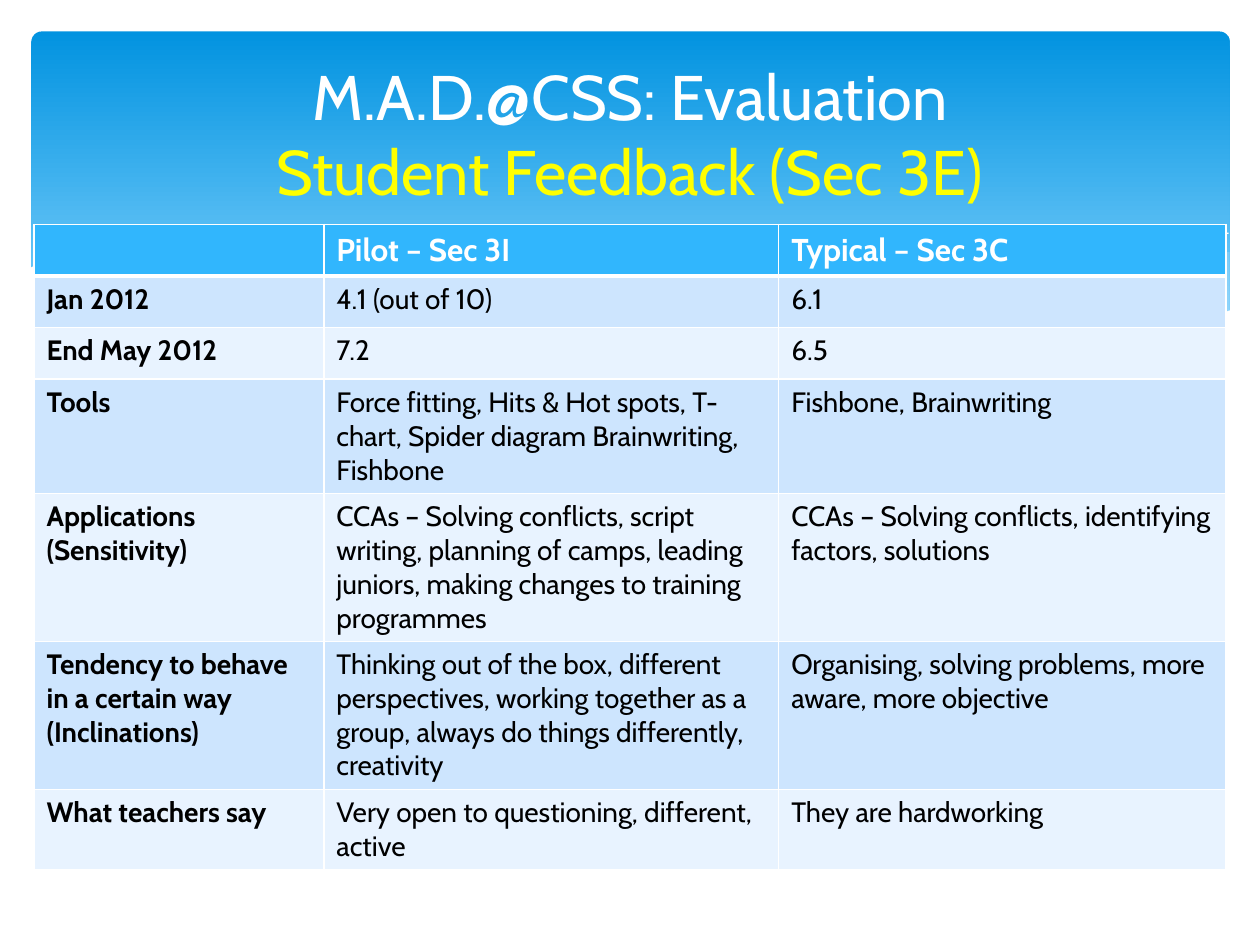
import dataclasses
import typing

import lxml.etree
import pptx
import pptx.dml.color
import pptx.enum.shapes
import pptx.enum.text
import pptx.oxml
import pptx.oxml.ns
import pptx.util

EMU_PER_PX = 9144
Point = tuple[int, int]


@dataclasses.dataclass(frozen=True)
class Theme:
    font: str = "Cabin"
    white: str = "FFFFFF"
    black: str = "000000"
    yellow: str = "FFFF00"
    banner_top: str = "0293E0"
    banner_bottom: str = "83D3FE"
    wave: str = "C6E7FC"
    header: str = "31B6FD"
    bands: tuple[str, str] = ("CDE5FE", "E8F3FF")
    title_size: int = 36
    header_size: int = 18
    body_size: int = 16


@dataclasses.dataclass(frozen=True)
class Wave:
    points: tuple[Point, ...]
    fill: str | None = None
    opacity: int = 100


THEME = Theme()

WAVES = (
    Wave(((975, 200), (935, 207), (891, 216), (805, 237), (753, 248), (661, 265),
          (705, 271), (757, 276), (803, 278), (854, 276), (897, 270), (935, 262),
          (976, 247), (976, 200)), THEME.wave, 29),
    Wave(((893, 273), (837, 265), (775, 254), (706, 240), (613, 218), (555, 205),
          (501, 196), (441, 189), (380, 186), (328, 187), (286, 191), (342, 199),
          (404, 211), (491, 232), (566, 248), (634, 261), (695, 270), (748, 276),
          (807, 279), (857, 277), (893, 273)), THEME.wave, 40),
    Wave(((309, 195), (343, 190), (387, 187), (433, 187), (489, 190), (556, 197),
          (636, 208), (727, 226), (831, 251), (907, 272))),
    Wave(((613, 257), (672, 241), (748, 223), (836, 204), (910, 192), (975, 185))),
    Wave(((977, 246), (940, 259), (899, 269), (850, 275), (793, 276), (726, 272),
          (647, 262), (555, 245), (475, 227), (391, 207), (339, 197), (292, 191),
          (250, 186), (211, 184), (161, 184), (119, 187), (85, 193), (59, 199),
          (40, 205), (23, 213), (23, 329), (977, 329)), THEME.white),
)

COLUMN_WIDTHS = (230, 361, 355)
ROW_HEIGHT = 41
ROWS = (
    ("", "Pilot – Sec 3I", "Typical – Sec 3C"),
    ("Jan 2012", "4.1 (out of 10)", "6.1"),
    ("End May 2012", "7.2", "6.5"),
    ("Tools",
     "Force fitting, Hits & Hot spots, T-chart, Spider diagram Brainwriting, Fishbone",
     "Fishbone, Brainwriting"),
    ("Applications (Sensitivity)",
     "CCAs – Solving conflicts, script writing, planning of camps, leading juniors, "
     "making changes to training programmes",
     "CCAs – Solving conflicts, identifying factors, solutions"),
    ("Tendency to behave in a certain way\n(Inclinations)",
     "Thinking out of the box, different perspectives, working together as a group, "
     "always do things differently, creativity",
     "Organising, solving problems, more aware, more objective"),
    ("What teachers say", "Very open to questioning, different, active",
     "They are hardworking"),
)


def px(length: int) -> pptx.util.Emu:
    return pptx.util.Emu(length * EMU_PER_PX)


def rgb(color: str) -> pptx.dml.color.RGBColor:
    return pptx.dml.color.RGBColor.from_string(color)


def add_text(paragraph: typing.Any, text: str, *, size: int, color: str,
             bold: bool = False) -> None:
    run = paragraph.add_run()
    run.text = text
    run.font.name = THEME.font
    run.font.size = pptx.util.Pt(size)
    run.font.bold = bold
    run.font.color.rgb = rgb(color)


def draw_banner(slide: typing.Any) -> None:
    banner = slide.shapes.add_shape(
        pptx.enum.shapes.MSO_SHAPE.ROUNDED_RECTANGLE, px(25), px(25), px(951), px(270))
    banner.adjustments[0] = 0.03
    banner.shadow.inherit = False
    banner.line.fill.background()
    banner.fill.gradient()
    banner.fill.gradient_angle = 270
    stops = ((0, THEME.banner_top), (0.9, THEME.banner_bottom))
    for stop, (position, color) in zip(banner.fill.gradient_stops, stops):
        stop.position = position
        stop.color.rgb = rgb(color)


def draw_wave(slide: typing.Any, wave: Wave) -> None:
    builder = slide.shapes.build_freeform(*wave.points[0], scale=EMU_PER_PX)
    builder.add_line_segments(wave.points[1:], close=wave.fill is not None)
    shape = builder.convert_to_shape()
    shape.shadow.inherit = False
    if wave.fill is None:
        shape.fill.background()
        shape.line.color.rgb = rgb(THEME.white)
        shape.line.width = 0
        return
    shape.line.fill.background()
    shape.fill.solid()
    shape.fill.fore_color.rgb = rgb(wave.fill)
    if wave.opacity < 100:
        color = shape.element.spPr.find(".//" + pptx.oxml.ns.qn("a:srgbClr"))
        alpha = lxml.etree.SubElement(color, pptx.oxml.ns.qn("a:alpha"))
        alpha.set("val", str(wave.opacity * 1000))


def place_title(slide: typing.Any) -> None:
    title = slide.shapes.title
    title.left, title.top, title.width, title.height = map(px, (50, 37, 900, 137))
    title.element.getparent().append(title.element)
    frame = title.text_frame
    frame.word_wrap = True
    frame.auto_size = pptx.enum.text.MSO_AUTO_SIZE.NONE
    frame.vertical_anchor = pptx.enum.text.MSO_ANCHOR.MIDDLE
    paragraph = frame.paragraphs[0]
    paragraph.alignment = pptx.enum.text.PP_ALIGN.CENTER
    add_text(paragraph, "M.A.D.@CSS: Evaluation", size=THEME.title_size, color=THEME.white)
    paragraph.add_line_break()
    add_text(paragraph, "Student Feedback (Sec 3E)", size=THEME.title_size,
             color=THEME.yellow)


def set_borders(cell: typing.Any, *, top: int, bottom: int) -> None:
    properties = cell._tc.get_or_add_tcPr()
    widths = {"lnL": 1, "lnR": 1, "lnT": top, "lnB": bottom}
    for index, (side, points) in enumerate(widths.items()):
        border = pptx.oxml.parse_xml(
            f'<a:{side} {pptx.oxml.ns.nsdecls("a")} w="{pptx.util.Pt(points)}">'
            f'<a:solidFill><a:srgbClr val="{THEME.white}"/></a:solidFill></a:{side}>')
        properties.insert(index, border)


def fill_cell(cell: typing.Any, text: str, row: int, column: int) -> None:
    is_header = row == 0
    cell.fill.solid()
    cell.fill.fore_color.rgb = rgb(THEME.header if is_header else THEME.bands[(row - 1) % 2])
    set_borders(cell, top=3 if row == 1 else 1, bottom=3 if is_header else 1)
    frame = cell.text_frame
    for index, line in enumerate(text.split("\n") if text else ()):
        paragraph = frame.add_paragraph() if index else frame.paragraphs[0]
        add_text(paragraph, line, bold=is_header or column == 0,
                 size=THEME.header_size if is_header else THEME.body_size,
                 color=THEME.white if is_header else THEME.black)


def draw_feedback_table(slide: typing.Any) -> None:
    graphic_frame = slide.shapes.add_table(
        len(ROWS), len(COLUMN_WIDTHS), px(27), px(178), px(sum(COLUMN_WIDTHS)), px(509))
    table = graphic_frame.table
    for column, width in zip(table.columns, COLUMN_WIDTHS):
        column.width = px(width)
    for row_index, texts in enumerate(ROWS):
        table.rows[row_index].height = px(ROW_HEIGHT)
        for column_index, text in enumerate(texts):
            fill_cell(table.cell(row_index, column_index), text, row_index, column_index)
    graphic_frame.height = px(509)


def main() -> None:
    presentation = pptx.Presentation()
    presentation.slide_width, presentation.slide_height = px(1000), px(750)
    slide = presentation.slides.add_slide(presentation.slide_layouts[5])
    draw_banner(slide)
    for wave in WAVES:
        draw_wave(slide, wave)
    place_title(slide)
    draw_feedback_table(slide)
    presentation.save("out.pptx")


if __name__ == "__main__":
    main()
